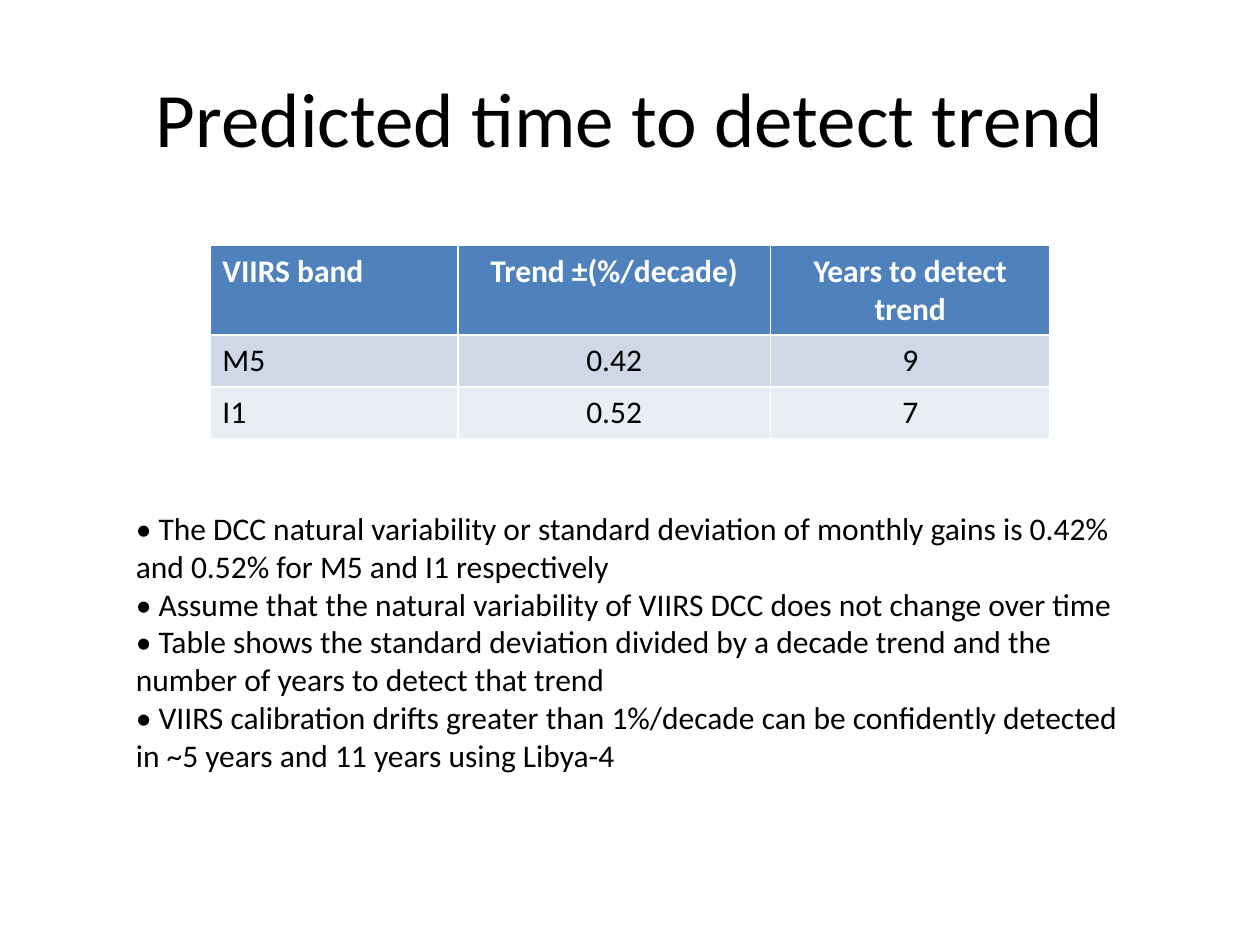
"""Build the slide on the predicted time to detect a calibration trend."""
from pptx import Presentation
from pptx.dml.color import RGBColor
from pptx.enum.text import MSO_ANCHOR, MSO_AUTO_SIZE, PP_ALIGN
from pptx.util import Inches, Pt

LEFT, CENTER = PP_ALIGN.LEFT, PP_ALIGN.CENTER
MIDDLE, TOP = MSO_ANCHOR.MIDDLE, MSO_ANCHOR.TOP
GROW, FIXED = MSO_AUTO_SIZE.SHAPE_TO_FIT_TEXT, MSO_AUTO_SIZE.NONE

FONT = "Calibri"
COLORS = {
    "ink": "000000",
    "header_ink": "FFFFFF",
    "header": "4F81BD",
    "odd_band": "D0D8E8",
    "even_band": "E9EDF4",
}
TITLE = "Predicted time to detect trend"
DETECTION = [
    ("VIIRS band", "Trend ±(%/decade)", "Years to detect trend"),
    ("M5", "0.42", "9"),
    ("I1", "0.52", "7"),
]
FINDINGS = [
    "The DCC natural variability or standard deviation of monthly gains is 0.42% and 0.52% for M5 and I1 respectively",
    "Assume that the natural variability of VIIRS DCC does not change over time",
    "Table shows the standard deviation divided by a decade trend and the number of years to detect that trend",
    "VIIRS calibration drifts greater than 1%/decade can be confidently detected in ~5 years and 11 years using Libya-4",
]
SLIDE_W, SLIDE_H = 10, 7.5
TITLE_AREA = (0.5, 0.3, 9, 1.25)
FINDINGS_AREA = (0.98, 3.99, 8.23, 2.22)
TABLE_TOP, ROW_H = 1.95, 0.41
COLUMN_WIDTHS = (1.97, 2.48, 2.22)


def color(name):
    return RGBColor.from_string(COLORS[name])


def write(paragraph, words, size=18, ink="ink", align=LEFT, bold=False):
    paragraph.alignment = align
    run = paragraph.add_run()
    run.text = words
    run.font.name = FONT
    run.font.size = Pt(size)
    run.font.bold = bold
    run.font.color.rgb = color(ink)


def add_text(slide, area, lines, anchor=TOP, fit=FIXED, **style):
    frame = slide.shapes.add_textbox(*map(Inches, area)).text_frame
    frame.word_wrap = True
    frame.auto_size = fit
    frame.vertical_anchor = anchor
    for index, line in enumerate(lines):
        paragraph = frame.add_paragraph() if index else frame.paragraphs[0]
        write(paragraph, line, **style)


def add_detection_table(slide):
    width = sum(COLUMN_WIDTHS)
    area = ((SLIDE_W - width) / 2, TABLE_TOP, width, ROW_H * len(DETECTION))
    table = slide.shapes.add_table(
        len(DETECTION), len(COLUMN_WIDTHS), *map(Inches, area)
    ).table
    for column, column_width in zip(table.columns, COLUMN_WIDTHS):
        column.width = Inches(column_width)
    for row, values in enumerate(DETECTION):
        is_header = row == 0
        band = "header" if is_header else ("even_band", "odd_band")[row % 2]
        for col, value in enumerate(values):
            cell = table.cell(row, col)
            cell.fill.solid()
            cell.fill.fore_color.rgb = color(band)
            write(
                cell.text_frame.paragraphs[0],
                value,
                ink="header_ink" if is_header else "ink",
                align=CENTER if col else LEFT,
                bold=is_header,
            )


def main():
    deck = Presentation()
    deck.slide_width, deck.slide_height = Inches(SLIDE_W), Inches(SLIDE_H)
    slide = deck.slides.add_slide(deck.slide_layouts[6])
    add_text(slide, TITLE_AREA, [TITLE], anchor=MIDDLE, size=44, align=CENTER)
    add_detection_table(slide)
    add_text(slide, FINDINGS_AREA, [f"• {finding}" for finding in FINDINGS], fit=GROW)
    deck.save("out.pptx")


if __name__ == "__main__":
    main()
